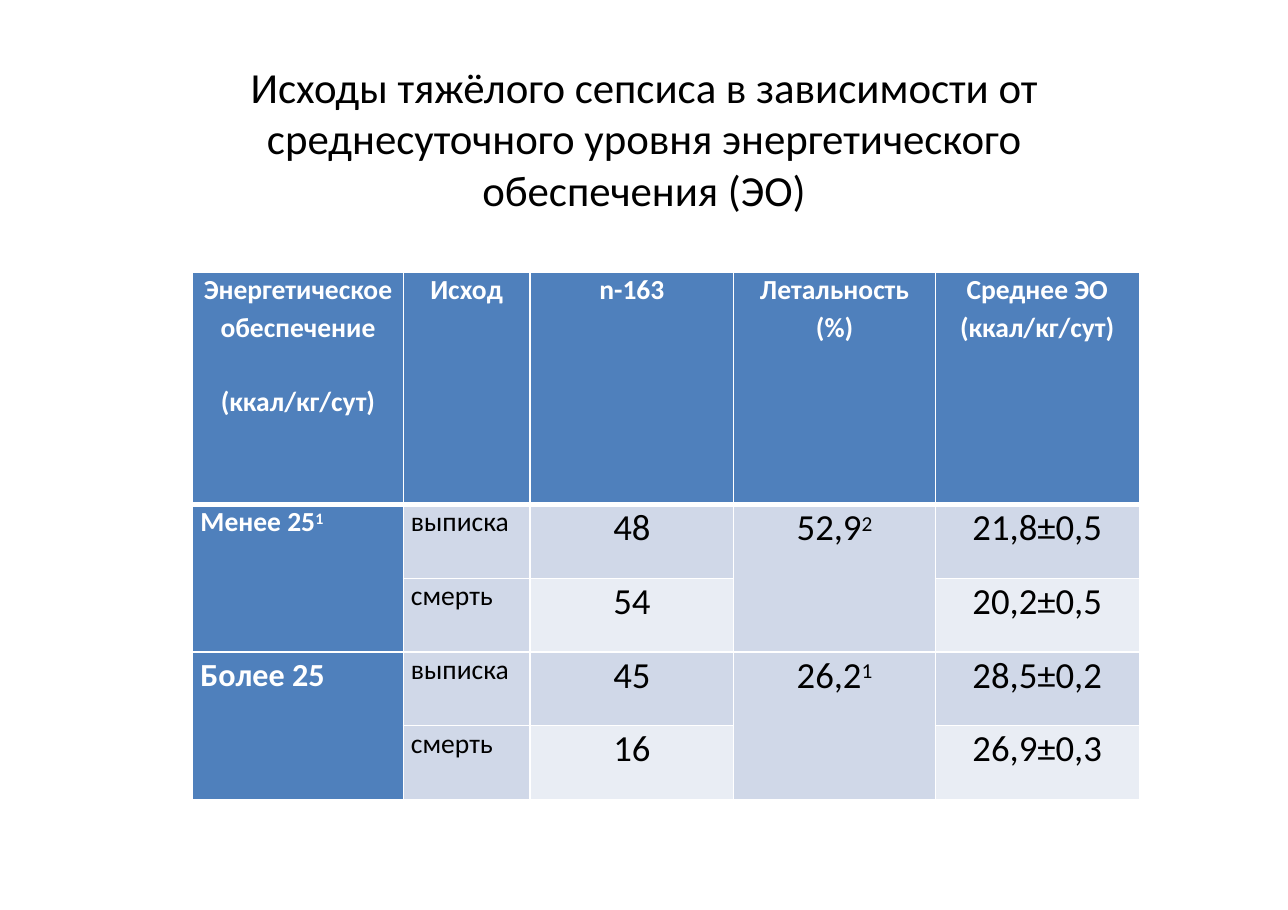
from dataclasses import dataclass

from lxml import etree
from pptx import Presentation
from pptx.dml.color import RGBColor
from pptx.enum.text import MSO_ANCHOR, PP_ALIGN
from pptx.oxml.ns import qn
from pptx.util import Inches, Pt

LEFT, MID = PP_ALIGN.LEFT, PP_ALIGN.CENTER
TOP = MSO_ANCHOR.TOP
WIDE, HIGH = Inches(11.69), Inches(8.26)


@dataclass(frozen=True)
class Theme:
    font: str = "Calibri"
    ink: str = "000000"
    white: str = "FFFFFF"
    blue: str = "4F80BC"
    band: str = "D0D8E8"
    pale: str = "E9EDF4"
    title: int = 28
    value: int = 24
    group: int = 21
    label: int = 18
    thin: int = 1
    thick: int = 3


def across(share):
    """Turn a percentage of the slide's width into a length."""
    return round(WIDE * share / 100)


def down(share):
    """Turn a percentage of the slide's height into a length."""
    return round(HIGH * share / 100)


class Page:
    def __init__(self, slide, theme):
        self.slide, self.theme = slide, theme

    def letter(self, frame, text, size, color, bold=False, align=MID, gaps=()):
        """Fill a frame; a caret marks a superscript, gaps precede later lines."""
        frame.text = text
        frame.word_wrap = True
        for para in frame.paragraphs:
            base, _, mark = para.text.partition("^")
            para.text = base
            para.alignment = align
            if mark:
                run = para.add_run()
                run.text = mark
                run.font._element.set("baseline", "25000")
            for run in para.runs:
                font = run.font
                font.name, font.size, font.bold = self.theme.font, Pt(size), bold
                font.color.rgb = RGBColor.from_string(color)
        for para, gap in zip(frame.paragraphs[1:], gaps):
            para.space_before = Pt(gap)

    def title(self, text, left, top, width, height):
        box = self.slide.shapes.add_textbox(
            across(left), down(top), across(width), down(height))
        frame = box.text_frame
        frame.margin_left = frame.margin_right = frame.margin_bottom = 0
        frame.margin_top = Inches(0.01)
        frame.vertical_anchor = TOP
        self.letter(frame, text, self.theme.title, self.theme.ink)

    def table(self, left, top, cols, rows):
        shape = self.slide.shapes.add_table(
            len(rows), len(cols), across(left), down(top),
            across(sum(cols)), down(sum(rows)))
        grid = shape.table
        for col, share in zip(grid.columns, cols):
            col.width = across(share)
        for row, share in zip(grid.rows, rows):
            row.height = down(share)
        return grid

    def border(self, cell, row):
        """Draw white rules, with a thick one under the header row."""
        props = cell._tc.get_or_add_tcPr()
        heavy = {0: "lnB", 1: "lnT"}.get(row)
        for side in ("lnL", "lnR", "lnT", "lnB"):
            width = self.theme.thick if side == heavy else self.theme.thin
            line = etree.SubElement(props, qn("a:" + side), w=str(int(Pt(width))))
            fill = etree.SubElement(line, qn("a:solidFill"))
            etree.SubElement(fill, qn("a:srgbClr"), val=self.theme.white)

    def paint(self, grid):
        """Set the borders and the fill of every cell."""
        look = self.theme
        for r, row in enumerate(grid.rows):
            for c, cell in enumerate(row.cells):
                self.border(cell, r)
                if r == 0 or c == 0:
                    color = look.blue
                elif r % 2 == 0 and c in (2, 4):
                    color = look.pale
                else:
                    color = look.band
                cell.fill.solid()
                cell.fill.fore_color.rgb = RGBColor.from_string(color)

    def cell(self, cell, text, size, color, pad=0, top=0.01, **style):
        cell.margin_left = Inches(pad)
        cell.margin_right = cell.margin_bottom = 0
        cell.margin_top = Inches(top)
        cell.vertical_anchor = TOP
        self.letter(cell.text_frame, text, size, color, **style)


HEADS = [
    "Энергетическое\nобеспечение\n(ккал/кг/сут)",
    "Исход",
    "n-163",
    "Летальность\n(%)",
    "Среднее ЭО\n(ккал/кг/сут)",
]
GROUPS = [
    ("Менее 25^1", "52,9^2", [("выписка", "48", "21,8±0,5"),
                              ("смерть", "54", "20,2±0,5")]),
    ("Более 25", "26,2^1", [("выписка", "45", "28,5±0,2"),
                            ("смерть", "16", "26,9±0,3")]),
]


def main():
    deck = Presentation()
    deck.slide_width, deck.slide_height = WIDE, HIGH
    look = Theme()
    page = Page(deck.slides.add_slide(deck.slide_layouts[6]), look)

    page.title("Исходы тяжёлого сепсиса в зависимости от\v"
               "среднесуточного уровня энергетического\v"
               "обеспечения (ЭО)", 16.34, 6.54, 67.32, 17.92)

    grid = page.table(14.97, 29.9, [16.34, 9.84, 15.83, 15.65, 15.83],
                      [25.54] + [8.11] * 4)
    page.paint(grid)
    for c, head in enumerate(HEADS):
        page.cell(grid.cell(0, c), head, look.label, look.white,
                  bold=True, gaps=(3.2, 26))

    sizes = [(look.label, 0.01), (look.group, 0.03)]
    for g, (name, rate, lines) in enumerate(GROUPS):
        first = 1 + 2 * g
        for c in (0, 3):
            grid.cell(first, c).merge(grid.cell(first + 1, c))
        size, top = sizes[g]
        page.cell(grid.cell(first, 0), name, size, look.white,
                  pad=0.07, top=top, bold=True, align=LEFT)
        page.cell(grid.cell(first, 3), rate, look.value, look.ink)
        for r, (end, count, mean) in enumerate(lines, first):
            page.cell(grid.cell(r, 1), end, look.label, look.ink,
                      pad=0.07, align=LEFT)
            page.cell(grid.cell(r, 2), count, look.value, look.ink)
            page.cell(grid.cell(r, 4), mean, look.value, look.ink)

    deck.save("out.pptx")


if __name__ == "__main__":
    main()
